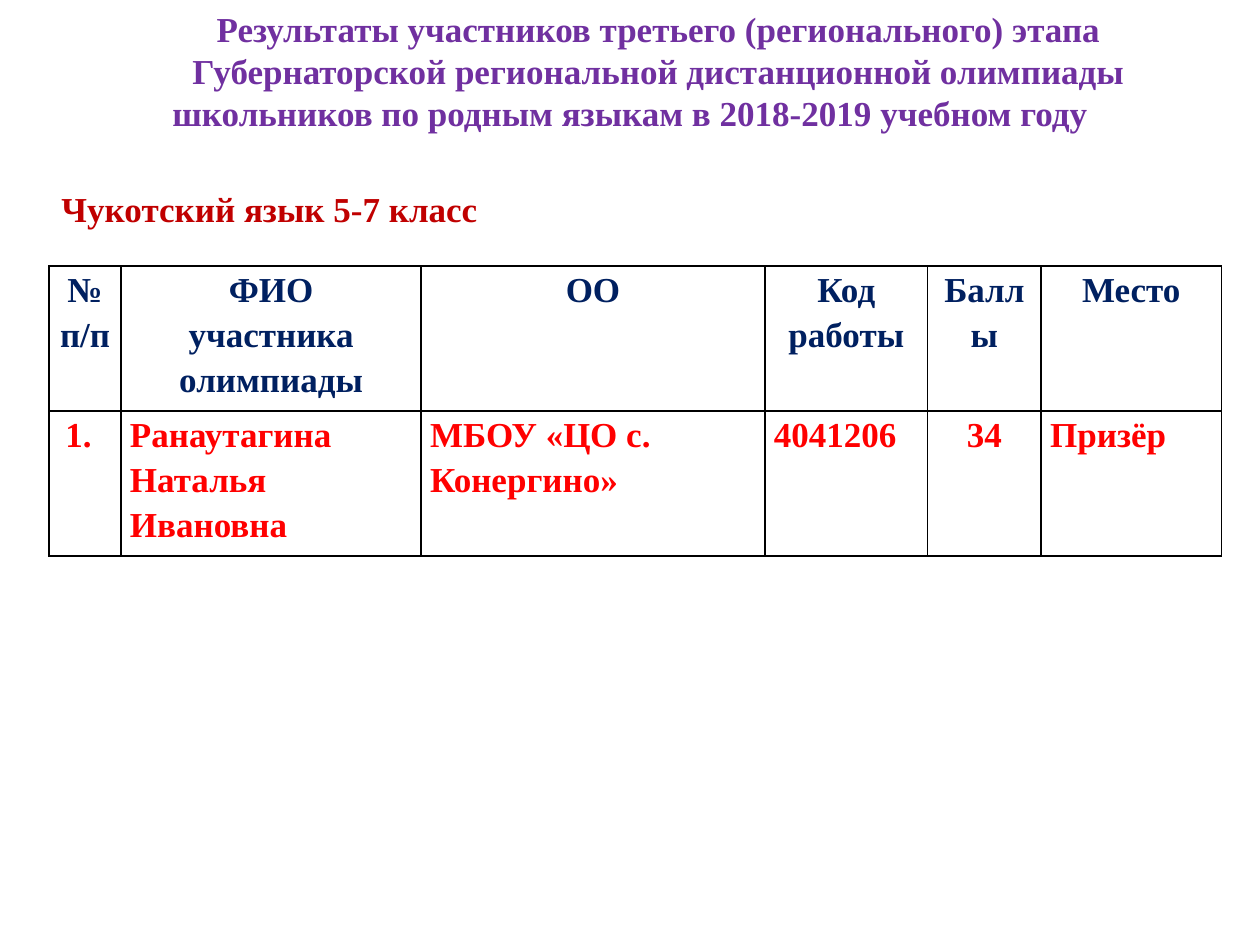
from dataclasses import dataclass

from lxml.etree import SubElement
from pptx import Presentation
from pptx.dml.color import RGBColor
from pptx.enum.text import MSO_ANCHOR as Anchor, PP_ALIGN as Align
from pptx.oxml.ns import qn
from pptx.util import Cm, Pt

FONT = "Times New Roman"
COLORS = {
    "title": "7030A0",
    "subject": "C00000",
    "header": "002060",
    "result": "FF0000",
    "border": "000000",
}


@dataclass
class TextBox:
    left: float
    top: float
    width: float
    height: float
    lines: list[str]
    color: str
    align: Align = Align.LEFT
    anchor: Anchor = Anchor.TOP
    first_indent: float = 0
    margin_top: float = 0.13


@dataclass
class Column:
    width: float
    header: list[str]
    result: list[str]
    align: Align = Align.LEFT
    result_indent: float = 0


def set_indent(p, left: float, first: float) -> None:
    pPr = p._p.get_or_add_pPr()
    pPr.set("marL", str(Cm(left)))
    pPr.set("indent", str(Cm(first)))


def write(tf, lines: list[str], color: str, align: Align) -> None:
    """Fill a text frame with bold paragraphs in one colour."""
    tf.text = "\n".join(lines)
    for p in tf.paragraphs:
        p.alignment = align
        for r in p.runs:
            r.font.name, r.font.size, r.font.bold = FONT, Pt(20), True
            r.font.color.rgb = RGBColor.from_string(COLORS[color])


def add_text(slide, box: TextBox) -> None:
    sp = slide.shapes.add_textbox(Cm(box.left), Cm(box.top), Cm(box.width), Cm(box.height))
    tf = sp.text_frame
    tf.word_wrap = True
    tf.vertical_anchor = box.anchor
    tf.margin_top = Cm(box.margin_top)
    write(tf, box.lines, box.color, box.align)
    for p in tf.paragraphs:
        set_indent(p, 0, box.first_indent)


def add_borders(cell) -> None:
    tcPr = cell._tc.get_or_add_tcPr()
    for side in ("lnL", "lnR", "lnT", "lnB"):
        ln = SubElement(tcPr, qn(f"a:{side}"), w=str(Pt(1)))
        fill = SubElement(ln, qn("a:solidFill"))
        SubElement(fill, qn("a:srgbClr"), val=COLORS["border"])


def fill_cell(cell, lines: list[str], color: str, align: Align, indent: float = 0) -> None:
    cell.margin_left = cell.margin_right = Cm(0.18)
    cell.margin_top = cell.margin_bottom = 0
    add_borders(cell)
    cell.fill.background()
    write(cell.text_frame, lines, color, align)
    for p in cell.text_frame.paragraphs:
        p.line_spacing = 1.15
        set_indent(p, indent, 0)


def add_results(slide, left: float, top: float, row_height: float, columns: list[Column]) -> None:
    width = sum(c.width for c in columns)
    table = slide.shapes.add_table(
        2, len(columns), Cm(left), Cm(top), Cm(width), Cm(2 * row_height)).table
    table.first_row = table.horz_banding = False
    for i, col in enumerate(columns):
        table.columns[i].width = Cm(col.width)
        fill_cell(table.cell(0, i), col.header, "header", Align.CENTER)
        fill_cell(table.cell(1, i), col.result, "result", col.align, col.result_indent)


TITLE = TextBox(
    0.79, 0, 24, 2.82,
    ["Результаты участников третьего (регионального) этапа",
     "Губернаторской региональной дистанционной олимпиады "
     "школьников по родным языкам в 2018-2019 учебном году "],
    "title", Align.CENTER, Anchor.MIDDLE, first_indent=0.97)
SUBJECT = TextBox(
    0.99, 3.58, 10.92, 1.88, ["Чукотский язык 5-7 класс"], "subject", margin_top=0.2)
COLUMNS = [
    Column(1.45, ["№", "п/п"], ["1."], result_indent=0.15),
    Column(6.05, ["ФИО", "участника олимпиады"], ["Ранаутагина", "Наталья Ивановна"]),
    Column(6.93, ["ОО"], ["МБОУ «ЦО с. Конергино»"]),
    Column(3.28, ["Код работы"], ["4041206"]),
    Column(2.29, ["Баллы"], ["34"], Align.CENTER),
    Column(3.63, ["Место"], ["Призёр"]),
]


def main() -> None:
    prs = Presentation()
    prs.slide_width, prs.slide_height = Cm(25.4), Cm(19.05)
    slide = prs.slides.add_slide(prs.slide_layouts[6])

    # Heading, results table, language and grade
    add_text(slide, TITLE)
    add_results(slide, 0.99, 5.36, 2.92, COLUMNS)
    add_text(slide, SUBJECT)

    prs.save("out.pptx")


if __name__ == "__main__":
    main()
